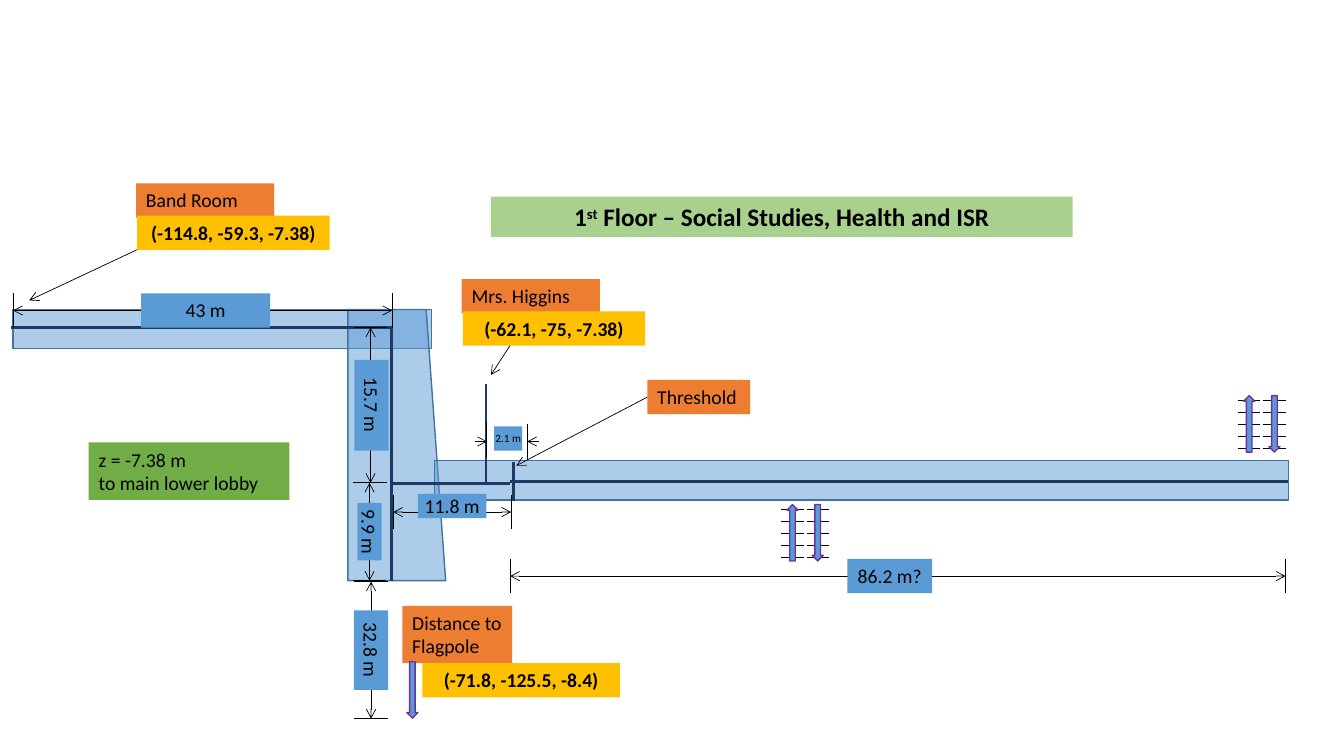
from dataclasses import dataclass

from lxml.etree import SubElement
from pptx import Presentation
from pptx.dml.color import RGBColor
from pptx.enum.shapes import MSO_CONNECTOR, MSO_SHAPE
from pptx.enum.text import MSO_ANCHOR, PP_ALIGN
from pptx.oxml.ns import qn
from pptx.util import Inches, Pt

COLUMNS, ROWS = 1333, 750
CELL = Inches(0.01)


@dataclass(frozen=True)
class Theme:
    """Colours, type sizes and line weights of the plan."""
    font: str = "Calibri"
    ink: str = "000000"
    blue: str = "5B9BD5"
    outline: str = "43739E"
    wall: str = "203864"
    stair: str = "7030A0"
    room: str = "ED7D31"
    coordinates: str = "FFC000"
    level: str = "70AD47"
    title: str = "A9D18E"
    title_size: int = 18
    body_size: int = 14
    small_size: int = 8
    thin: float = 0.5
    edge: float = 1
    thick: float = 2


@dataclass(frozen=True)
class Box:
    """A rectangle in columns and rows of the slide grid."""
    left: float
    top: float
    width: float
    height: float

    @property
    def right(self):
        """Return the column of the right side."""
        return self.left + self.width

    @property
    def bottom(self):
        """Return the row of the lower side."""
        return self.top + self.height

    @property
    def center(self):
        """Return the middle point."""
        return self.left + self.width / 2, self.top + self.height / 2

    def inner(self, x, y, width, height):
        """Return a box offset from this box's corner."""
        return Box(self.left + x, self.top + y, width, height)

    def lengths(self):
        """Return the four measures in slide units."""
        return [round(n * CELL) for n in (self.left, self.top, self.width, self.height)]


THEME = Theme()


def centered(center, width, height):
    """Return a box of the given size around a point."""
    return Box(center[0] - width / 2, center[1] - height / 2, width, height)


def add_line(shapes, start, end, color=THEME.ink, weight=THEME.thin, head=False, tail=False):
    """Draw a straight line with optional open arrowheads."""
    points = [round(n * CELL) for n in (*start, *end)]
    line = shapes.add_connector(MSO_CONNECTOR.STRAIGHT, *points)
    line.line.color.rgb = RGBColor.from_string(color)
    line.line.width = Pt(weight)
    properties = line._element.spPr
    for tag, wanted in (("a:headEnd", head), ("a:tailEnd", tail)):
        if wanted:
            SubElement(properties.find(qn("a:ln")), qn(tag), type="arrow")
    SubElement(properties, qn("a:effectLst"))
    return line


def add_figure(shapes, kind, box, line_color, rotation=0, opacity=100):
    """Draw a blue outlined preset shape."""
    shape = shapes.add_shape(kind, *box.lengths())
    shape.shadow.inherit = False
    shape.rotation = rotation
    shape.fill.solid()
    shape.fill.fore_color.rgb = RGBColor.from_string(THEME.blue)
    shape.line.color.rgb = RGBColor.from_string(line_color)
    shape.line.width = Pt(THEME.edge)
    if opacity < 100:
        color = shape._element.spPr.find(qn("a:solidFill"))[0]
        SubElement(color, qn("a:alpha"), val=str(opacity * 1000))


def add_label(shapes, box, text, fill, size=THEME.body_size, bold=False,
              align=PP_ALIGN.LEFT, rotation=0, wrap=True, tight=False):
    """Write text on a filled box, one paragraph for each line."""
    label = shapes.add_textbox(*box.lengths())
    label.rotation = rotation
    label.fill.solid()
    label.fill.fore_color.rgb = RGBColor.from_string(fill)
    frame = label.text_frame
    frame.word_wrap = wrap
    if tight:
        frame.margin_left = frame.margin_right = frame.margin_top = frame.margin_bottom = 0
        frame.vertical_anchor = MSO_ANCHOR.MIDDLE
    frame.text = text
    for paragraph in frame.paragraphs:
        paragraph.alignment = align
        paragraph.font.name = THEME.font
        paragraph.font.size = Pt(size)
        paragraph.font.bold = bold
        paragraph.font.color.rgb = RGBColor.from_string(THEME.ink)
    return label


def add_title(slide, box):
    """Write the floor's title with its raised ordinal ending."""
    label = add_label(slide.shapes, box, "1", THEME.title, THEME.title_size, True, PP_ALIGN.CENTER)
    paragraph = label.text_frame.paragraphs[0]
    ending = paragraph.add_run()
    ending.text = "st"
    ending._r.get_or_add_rPr().set("baseline", "30000")
    paragraph.add_run().text = " Floor – Social Studies, Health and ISR"


def add_corridors(slide, box):
    """Draw the three corridors and the walls inside the plan's box."""
    hall = centered((box.left + 380.5, box.top + 134.5), 269, 97)
    for kind, area, rotation in (
        (MSO_SHAPE.RECTANGLE, box.inner(0, 0, 415, 39), 0),
        (MSO_SHAPE.FLOWCHART_MANUAL_INPUT, hall, 90),
        (MSO_SHAPE.RECTANGLE, box.inner(418, 150, 847, 39), 0),
    ):
        add_figure(slide.shapes, kind, area, THEME.outline, rotation, 50)
    for x, y, end_x, end_y in (
        (-2, 18, 376, 18), (375, 18, 375, 269), (375, 173, 493, 173),
        (469, 74, 469, 172), (493, 171, 1264, 171), (496, 151, 496, 190),
    ):
        add_line(slide.shapes, (box.left + x, box.top + y), (box.left + end_x, box.top + end_y),
                 THEME.wall, THEME.thick)


def add_dimension(slide, box, text, length, thickness=34, shift=(0, 0)):
    """Measure the long side of a box, with end ticks and a label."""
    shapes = slide.shapes.add_group_shape().shapes
    x, y = box.center
    vertical = box.height > box.width
    if vertical:
        start, end = (x, box.top), (x, box.bottom)
        ticks = [((box.left, row), (box.right, row)) for row in (box.top, box.bottom)]
    else:
        start, end = (box.left, y), (box.right, y)
        ticks = [((column, box.top), (column, box.bottom)) for column in (box.left, box.right)]
    add_line(shapes, start, end, head=True, tail=True)
    for tick in ticks:
        add_line(shapes, *tick)
    add_label(shapes, centered((x + shift[0], y + shift[1]), length, thickness), text, THEME.blue,
              align=PP_ALIGN.CENTER, rotation=90 if vertical else 0, wrap=False,
              tight=thickness < 30)


def add_gap(slide, box, text):
    """Measure a narrow gap with arrows that point in from outside."""
    shapes = slide.shapes.add_group_shape().shapes
    row = box.top + 20
    add_line(shapes, (box.left - 11, row), (box.left + 1, row), tail=True)
    add_line(shapes, (box.right + 12, row), (box.right, row), tail=True)
    add_line(shapes, (box.left, box.top), (box.left, box.bottom - 3))
    add_line(shapes, (box.right, box.top + 3), (box.right, box.bottom))
    add_label(shapes, box.inner(8, 5, 28, 24), text, THEME.blue, THEME.small_size,
              align=PP_ALIGN.CENTER, wrap=False, tight=True)


def add_stair_arrow(shapes, center, rotation):
    """Draw a stair arrow, up at 270 degrees and down at 90."""
    add_figure(shapes, MSO_SHAPE.RIGHT_ARROW, centered(center, 56, 11), THEME.stair, rotation)


def add_stairs(slide, box):
    """Draw an up flight and a down flight of five treads each."""
    shapes = slide.shapes.add_group_shape().shapes
    for flight, rotation in enumerate((270, 90)):
        left = box.left + 25 * flight
        for tread in range(5):
            row = box.top + 5 + 12 * tread
            add_line(shapes, (left, row), (left + 22, row))
        add_stair_arrow(shapes, (left + 11, box.center[1]), rotation)


def add_place(slide, box, name, side=None, target=None, coordinates=None):
    """Name a place, with a leader from one side and its coordinates."""
    label = add_label(slide.shapes, box, name, THEME.room)
    if target:
        leader = add_line(slide.shapes, box.center, target, tail=True)
        leader.begin_connect(label, side)
    if coordinates:
        text, x, y, width = coordinates
        add_label(slide.shapes, box.inner(x, y, width, 34), text, THEME.coordinates,
                  bold=True, align=PP_ALIGN.CENTER)


def build_floor(slide):
    """Lay out the floor plan on the slide."""
    add_corridors(slide, Box(13, 307, 1265, 269))
    add_label(slide.shapes, Box(88, 439, 199, 57), "z = -7.38 m\nto main lower lobby", THEME.level)
    add_title(slide, Box(487, 195, 577, 40))
    for left, top in ((775, 500), (1228, 392)):
        add_stairs(slide, Box(left, top, 47, 57))
    add_gap(slide, Box(482, 418, 41, 38), "2.1 m")
    for box, text, length, thickness, shift in (
        (Box(350, 479, 33, 97), "9.9 m", 57, 24, (0, 0)),
        (Box(351, 577, 34, 136), "32.8 m", 79, 34, (0, 0)),
        (Box(506, 555, 769, 33), "86.2 m?", 84, 34, (-8, 0)),
        (Box(390, 491, 117, 34), "11.8 m", 68, 24, (0, -6)),
        (Box(13, 291, 376, 34), "43 m", 128, 34, (3, 0)),
        (Box(351, 325, 33, 154), "15.7 m", 90, 34, (1, 0)),
    ):
        add_dimension(slide, box, text, length, thickness, shift)
    add_place(slide, Box(135, 182, 137, 34), "Band Room", 2, (29, 298),
              ("(-114.8, -59.3, -7.38)", 1, 32, 191))
    add_place(slide, Box(458, 277, 137, 34), "Mrs. Higgins", 2, (487, 372),
              ("(-62.1, -75, -7.38)", 1, 32, 181))
    add_place(slide, Box(642, 377, 102, 34), "Threshold", 1, (512, 462))
    add_place(slide, Box(399, 601, 109, 57), "Distance to Flagpole",
              coordinates=("(-71.8, -125.5, -8.4)", 20, 57, 196))
    add_stair_arrow(slide.shapes, (409, 684.5), 90)


def main():
    """Build and save the presentation."""
    presentation = Presentation()
    presentation.slide_width = COLUMNS * CELL
    presentation.slide_height = ROWS * CELL
    build_floor(presentation.slides.add_slide(presentation.slide_layouts[6]))
    presentation.save("out.pptx")


if __name__ == "__main__":
    main()
